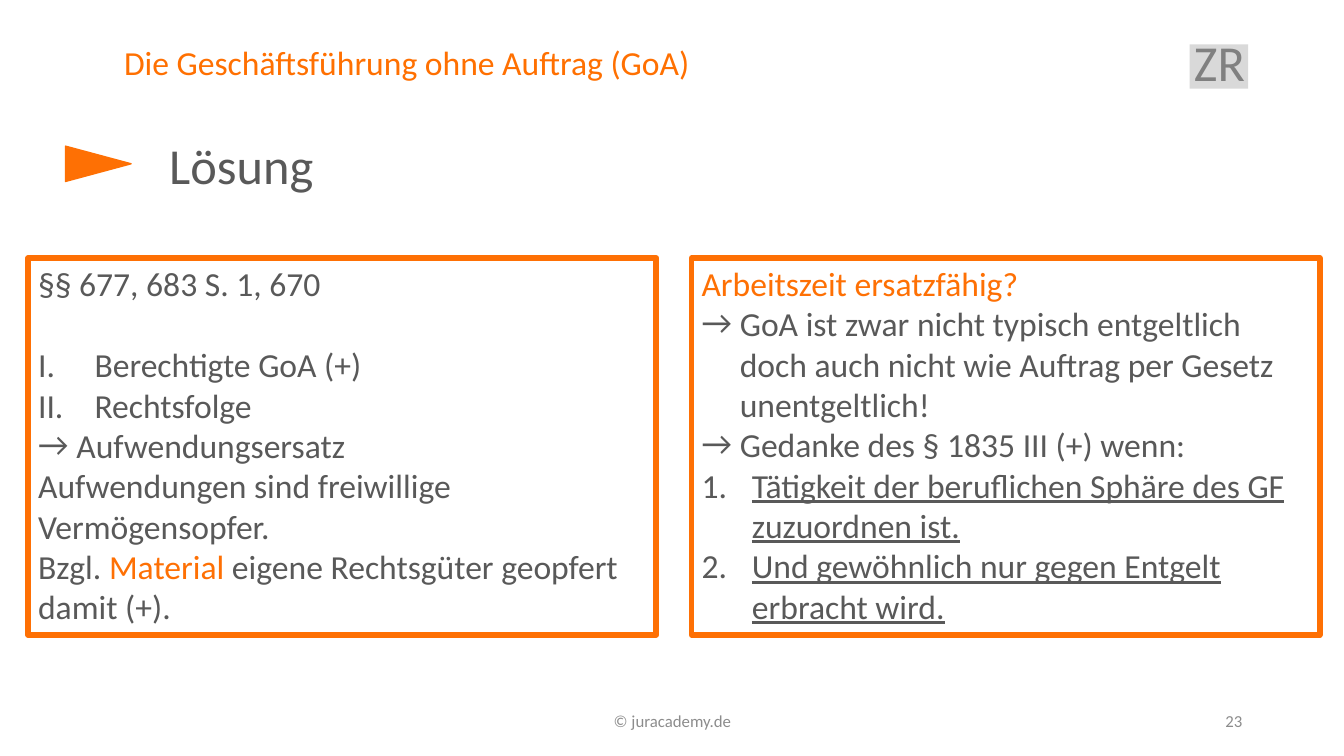
"""Build the slide on the solution of the GoA case."""
from dataclasses import dataclass

from lxml.etree import SubElement
from pptx import Presentation
from pptx.dml.color import RGBColor as Rgb
from pptx.enum.shapes import MSO_SHAPE as Kind
from pptx.enum.text import MSO_ANCHOR as Anchor, MSO_AUTO_SIZE as Fit, PP_ALIGN as Align
from pptx.oxml.ns import qn
from pptx.util import Inches, Pt


@dataclass(frozen=True)
class Theme:
    """Hold the colours, type sizes and font."""
    font: str = "Calibri"
    head: str = "FF7001"
    mark: str = "FE7004"
    text: str = "595959"
    tag: str = "808080"
    tile: str = "D9D9D9"
    foot: str = "8C8C8C"
    big: int = 36
    mid: int = 24
    small: int = 12


T = Theme()
ROMAN = ("buAutoNum", "type", "romanUcPeriod", 0.56)
ARROW = ("buChar", "char", "→", 0.38)
COUNT = ("buAutoNum", "type", "arabicPeriod", 0.5)
PLAIN = ("buNone", None, None, 0)

LEFT = [
    (PLAIN, 0, [("§§ 677, 683 S. 1, 670", T.text, False)]),
    (ROMAN, 29.3, [("Berechtigte GoA (+)", T.text, False)]),
    (ROMAN, 0, [("Rechtsfolge", T.text, False)]),
    (ARROW, 0, [("Aufwendungsersatz", T.text, False)]),
    (PLAIN, 0, [("Aufwendungen sind freiwillige Vermögensopfer.", T.text, False)]),
    (PLAIN, 0, [("Bzgl. ", T.text, False), ("Material ", T.mark, False),
                ("eigene Rechtsgüter geopfert damit (+).", T.text, False)]),
]
RIGHT = [
    (PLAIN, 0, [("Arbeitszeit ersatzfähig?", T.mark, False)]),
    (ARROW, 0, [("GoA ist zwar nicht typisch entgeltlich doch auch nicht wie "
                 "Auftrag per Gesetz unentgeltlich!", T.text, False)]),
    (ARROW, 0, [("Gedanke des § 1835 III (+) wenn:", T.text, False)]),
    (COUNT, 0, [("Tätigkeit der beruflichen Sphäre des GF zuzuordnen ist.", T.text, True)]),
    (COUNT, 0, [("Und gewöhnlich nur gegen Entgelt erbracht wird.", T.text, True)]),
]


def place(shape, area):
    """Move a shape to its left, top, width and height."""
    shape.left, shape.top, shape.width, shape.height = map(Inches, area)


def add_run(para, text, size, color, under=False):
    """Add one formatted run to a paragraph."""
    run = para.add_run()
    run.text = text
    font = run.font
    font.name, font.size = T.font, Pt(size)
    font.color.rgb = Rgb.from_string(color)
    if under:
        font.underline = True


def set_mark(para, mark):
    """Give a paragraph its bullet and hanging indent."""
    tag, key, value, indent = mark
    props = para._p.get_or_add_pPr()
    props.set("marL", str(Inches(indent)))
    props.set("indent", str(-Inches(indent)))
    if key:
        SubElement(props, qn("a:buFont"), typeface=T.font)
    node = SubElement(props, qn("a:" + tag))
    if key:
        node.set(key, value)


def set_up(frame, anchor=Anchor.TOP):
    """Make a text frame wrap at a fixed size."""
    frame.word_wrap = True
    frame.auto_size = Fit.NONE
    frame.vertical_anchor = anchor


def add_line(shape, text, size, color, align=Align.LEFT, anchor=Anchor.TOP):
    """Write one line of text in a shape."""
    set_up(shape.text_frame, anchor)
    para = shape.text_frame.paragraphs[0]
    para.alignment = align
    add_run(para, text, size, color)
    return para


def fill_holder(holder, area, text, size, color, align):
    """Move a placeholder and write its line."""
    place(holder, area)
    para = add_line(holder, text, size, color, align)
    set_mark(para, PLAIN)
    para.line_spacing = 0.9
    para.space_before = Pt(0)


def add_label(slide, area, *style):
    """Add a text box with one line."""
    box = slide.shapes.add_textbox(*map(Inches, area))
    add_line(box, *style)


def add_form(slide, kind, area, fill=None, line=None, width=1):
    """Add a preset shape without a shadow."""
    shape = slide.shapes.add_shape(kind, *map(Inches, area))
    shape.shadow.inherit = False
    if fill:
        shape.fill.solid()
        shape.fill.fore_color.rgb = Rgb.from_string(fill)
    else:
        shape.fill.background()
    if line:
        shape.line.color.rgb = Rgb.from_string(line)
        shape.line.width = Pt(width)
    else:
        shape.line.fill.background()
    return shape


def add_panel(slide, left, items):
    """Add a framed panel with its list."""
    panel = add_form(slide, Kind.RECTANGLE, (left, 2.56, 6.23, 3.74), line=T.mark, width=4)
    frame = panel.text_frame
    set_up(frame)
    for i, (mark, gap, runs) in enumerate(items):
        para = frame.add_paragraph() if i else frame.paragraphs[0]
        para.alignment = Align.LEFT
        set_mark(para, mark)
        if gap:
            para.space_before = Pt(gap)
        for text, color, under in runs:
            add_run(para, text, T.mid, color, under)


def main():
    """Build and save the slide."""
    deck = Presentation()
    deck.slide_width, deck.slide_height = Inches(13.33), Inches(7.5)
    slide = deck.slides.add_slide(deck.slide_layouts[1])
    tile = add_form(slide, Kind.RECTANGLE, (11.8, 0.44, 0.58, 0.44), T.tile)
    slide.shapes._spTree.insert(2, tile._element)
    fill_holder(slide.shapes.title, (1.13, 0.41, 9.99, 0.47),
                "Die Geschäftsführung ohne Auftrag (GoA)", T.mid, T.head, Align.LEFT)
    fill_holder(slide.placeholders[1], (11.66, 0.33, 0.87, 0.75),
                "ZR", T.big, T.tag, Align.CENTER)
    add_label(slide, (4.42, 6.95, 4.5, 0.4), "© juracademy.de",
              T.small, T.foot, Align.CENTER, Anchor.MIDDLE)
    add_label(slide, (9.42, 6.95, 3, 0.4), "23",
              T.small, T.foot, Align.RIGHT, Anchor.MIDDLE)
    arrow = add_form(slide, Kind.ISOSCELES_TRIANGLE, (0.8, 1.3, 0.35, 0.65), T.mark, T.mark)
    arrow.rotation = 90
    add_label(slide, (1.58, 1.28, 10.83, 0.71), "Lösung", T.big, T.text)
    for left, items in ((0.28, LEFT), (6.86, RIGHT)):
        add_panel(slide, left, items)
    deck.save("out.pptx")


if __name__ == "__main__":
    main()
